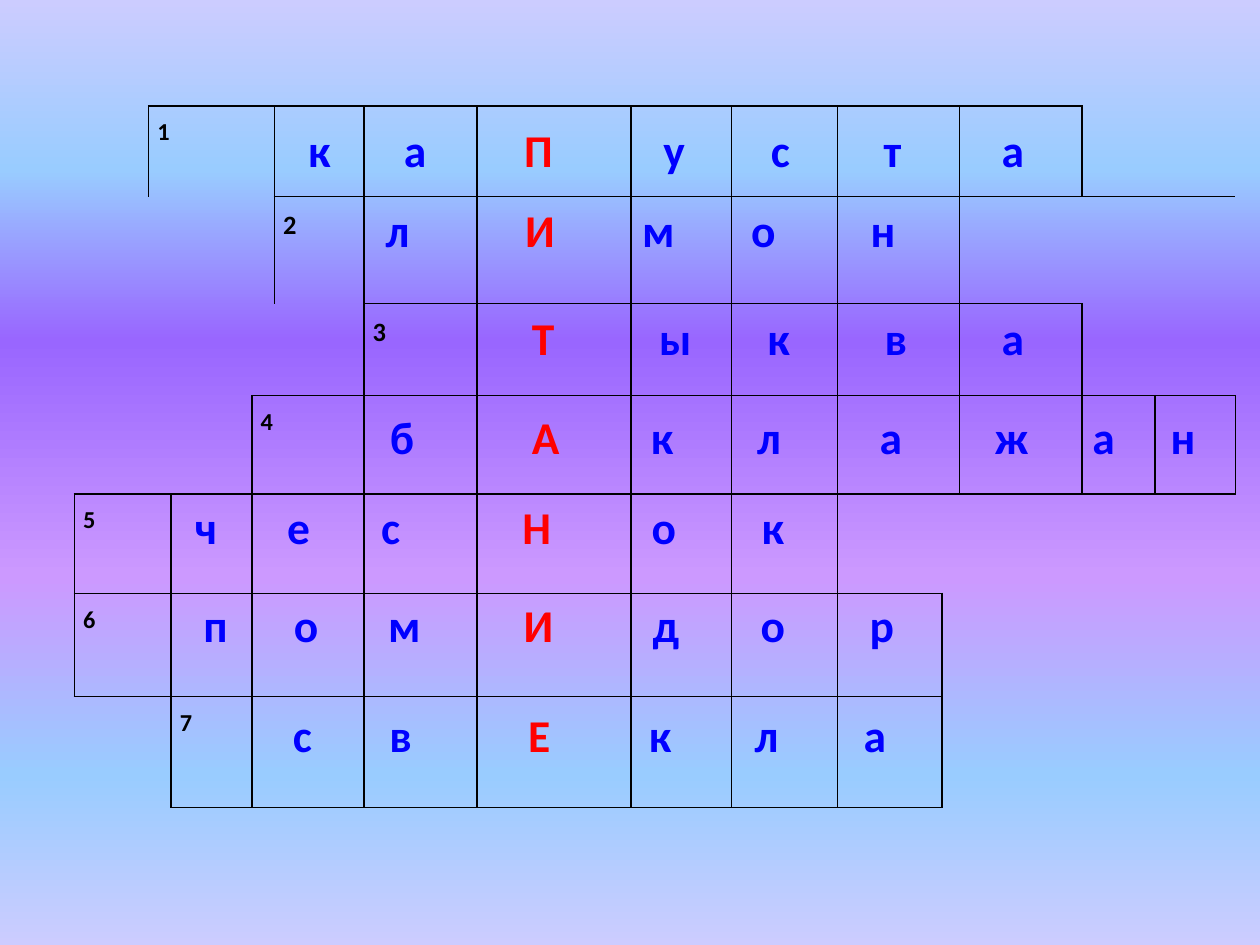
from dataclasses import dataclass

from lxml.etree import SubElement
from pptx import Presentation
from pptx.dml.color import RGBColor as Color
from pptx.enum.text import PP_ALIGN as Align
from pptx.oxml import parse_xml
from pptx.oxml.ns import nsdecls, qn
from pptx.util import Inches, Pt


@dataclass(frozen=True)
class Theme:
    font: str = "Calibri"
    number: str = "000000"
    letter: str = "0000FF"
    key: str = "FF0000"
    line: str = "000000"
    line_width: int = Pt(1)
    letter_size: int = 26
    sky: tuple = ((0, "CCCCFF"), (18, "99CCFF"), (36, "9966FF"),
                  (61, "CC99FF"), (82, "99CCFF"), (100, "CCCCFF"))


theme = Theme()


def add_grid(page, left, top, widths, heights):
    """Add an unfilled table without banding."""
    frame = page.shapes.add_table(
        len(heights), len(widths), Inches(left), Inches(top),
        Inches(sum(widths)), Inches(sum(heights)))
    grid = frame.table
    grid.first_row = grid.horz_banding = False
    for column, width in zip(grid.columns, widths):
        column.width = Inches(width)
    for row, height in zip(grid.rows, heights):
        row.height = Inches(height)
    return grid


def dress_cell(cell, sides="", text="", color=theme.letter,
               size=theme.letter_size, align=Align.CENTER, shift=0):
    """Border the named sides and write text; shift widens one side margin."""
    cell.fill.background()
    cell.margin_left = Inches(0.07 + max(shift, 0))
    cell.margin_right = Inches(0.07 + max(-shift, 0))
    cell.margin_top = cell.margin_bottom = 0
    properties = cell._tc.get_or_add_tcPr()
    for position, side in enumerate("LRTB"):
        paint = (f'<a:solidFill><a:srgbClr val="{theme.line}"/></a:solidFill>'
                 if side in sides else "<a:noFill/>")
        properties.insert(position, parse_xml(
            f'<a:ln{side} {nsdecls("a")} w="{theme.line_width}">{paint}</a:ln{side}>'))
    if text:
        para = cell.text_frame.paragraphs[0]
        para.alignment = align
        para.line_spacing = 1.15
        para.space_after = Pt(10)
        span = para.add_run()
        span.text = text
        span.font.name = theme.font
        span.font.size = Pt(size)
        span.font.bold = True
        span.font.color.rgb = Color.from_string(color)


deck = Presentation()
deck.slide_width, deck.slide_height = Inches(10), Inches(7.5)
page = deck.slides.add_slide(deck.slide_layouts[6])

# Background: vertical gradient
backdrop = page.background.fill
backdrop.gradient()
backdrop.gradient_angle = 270
stops = next(page._element.iter(qn("a:gsLst")))
for stop in list(stops):
    stops.remove(stop)
for place, color in theme.sky:
    stop = SubElement(stops, qn("a:gs"), pos=str(place * 1000))
    SubElement(stop, qn("a:srgbClr"), val=color)

# Crossword grid: each row is a list of (column span, bordered sides)
# and the index and size of its numbered cell
box, wide = (1, "LRTB"), (2, "LRTB")
crossword_rows = [
    ([(1, "R"), (3, "LRTB"), *[box] * 5, wide, box, (2, "L")], 1, 24),
    ([(4, "R"), *[box] * 5, wide, (3, "LTB")], 1, 26),
    ([(5, "R"), *[box] * 4, wide, box, (2, "LB")], 1, 26),
    ([(3, "RB"), wide, *[box] * 4, wide, *[box] * 3], 1, 24),
    ([wide, box, wide, *[box] * 4, (5, "LTB")], 0, 24),
    ([wide, box, wide, *[box] * 5, (4, "L")], 0, 24),
    ([(2, "TR"), box, wide, *[box] * 5, (4, "L")], 1, 24),
]
crossword = add_grid(
    page, 0.59, 0.84,
    [0.59, 0.14, 0.64, 0.14, 0.71, 0.9, 1.22, 0.8, 0.84, 0.83, 0.14, 0.97, 0.58, 0.64],
    [0.72, 0.85, 0.73, 0.78, 0.79, 0.82, 0.88])
for row, (cells, numbered, size) in enumerate(crossword_rows):
    column = 0
    for index, (width, sides) in enumerate(cells):
        first = crossword.cell(row, column)
        last = column + width - 1
        if width > 1:
            first.merge(crossword.cell(row, last))
        number = str(row + 1) if index == numbered else ""
        dress_cell(first, sides, number, theme.number, size, Align.LEFT)
        if number:
            span = first.text_frame.paragraphs[0].runs[0]
            span._r.get_or_add_rPr().set("baseline", "30000")
        for covered in range(column + 1, last + 1):
            inner = sides.replace("L", "")
            dress_cell(crossword.cell(row, covered),
                       inner if covered == last else inner.replace("R", ""))
        column = last + 1

# Answers: word, left, top, height, column widths, shift of the key letter
answers = [
    ("каПуста", 2.17, 0.92, 0.5, [0.73, 0.79, 1.25, 0.82, 0.87, 0.91, 1], -0.08),
    ("лИмон", 2.8, 1.55, 0.79, [0.71, 1.31, 0.81, 0.86, 1.04], 0.24),
    ("Тыква", 3.74, 2.41, 0.71, [1.22, 0.8, 0.84, 1.02, 0.84], -0.08),
    ("бАклажан", 2.8, 3.2, 0.71, [0.78, 1.26, 0.83, 0.87, 1.06, 0.86, 0.6, 0.66], 0.24),
    ("чесНок", 1.3, 3.91, 0.87, [0.67, 0.8, 0.66, 1.42, 0.84, 0.89], 0.24),
    ("помИдор", 1.38, 4.69, 0.87, [0.66, 0.78, 0.78, 1.27, 0.83, 0.87, 0.86], 0.08),
    ("свЕкла", 2.01, 5.56, 0.87, [0.78, 0.78, 1.26, 0.82, 0.87, 0.85], 0.16),
]
for word, left, top, height, widths, shift in answers:
    answer = add_grid(page, left, top, widths, [height])
    for column, letter in enumerate(word):
        if letter.isupper():
            dress_cell(answer.cell(0, column), text=letter, color=theme.key, shift=shift)
        else:
            dress_cell(answer.cell(0, column), text=letter)

deck.save("out.pptx")
